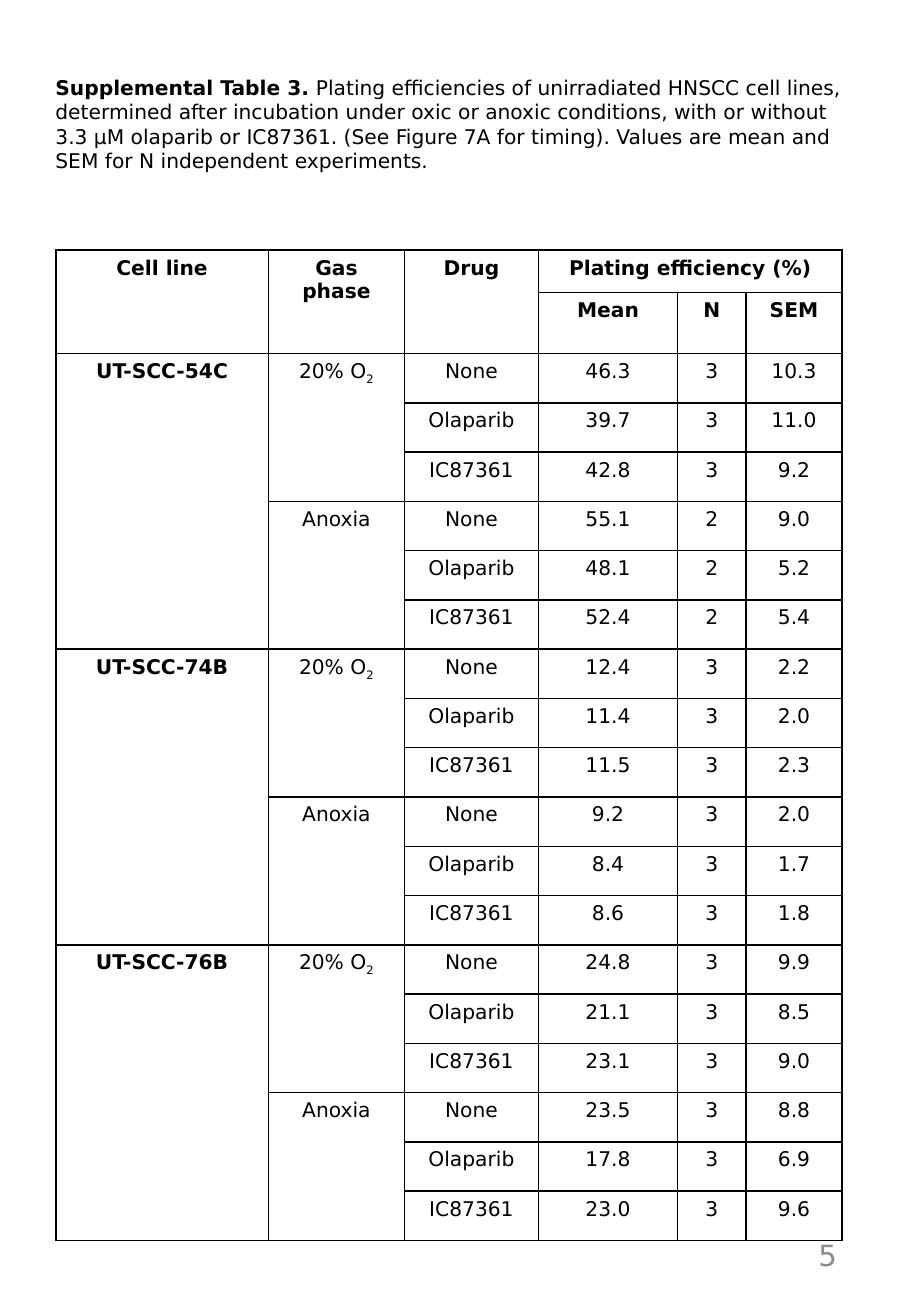
from lxml.etree import SubElement
from pptx import Presentation
from pptx.dml.color import RGBColor
from pptx.enum.text import MSO_ANCHOR, PP_ALIGN
from pptx.oxml.ns import qn
from pptx.util import Cm, Pt

FONT = "DejaVu Sans"
COLORS = {"ink": "000000", "paper": "FFFFFF", "gray": "8C8C8C"}


def style(run, size=12, color="ink", bold=False):
    run.font.name = FONT
    run.font.size = Pt(size)
    run.font.bold = bold
    run.font.color.rgb = RGBColor.from_string(COLORS[color])


def fill_cell(cell, text, bold=False):
    para = cell.text_frame.paragraphs[0]
    para.text = text
    para.alignment = PP_ALIGN.CENTER
    for run in para.runs:
        style(run, bold=bold)


deck = Presentation()
deck.slide_width, deck.slide_height = Cm(19.05), Cm(27.51)
slide = deck.slides.add_slide(deck.slide_layouts[6])

# Caption
box = slide.shapes.add_textbox(Cm(0.91), Cm(1.45), Cm(17.22), Cm(2.31))
box.text_frame.word_wrap = True
para = box.text_frame.paragraphs[0]
para.text = "Supplemental Table 3."
para.add_run().text = (
    " Plating efficiencies of unirradiated HNSCC cell lines, determined after "
    "incubation under oxic or anoxic conditions, with or without 3.3 μM olaparib "
    "or IC87361. (See Figure 7A for timing). Values are mean and SEM for N "
    "independent experiments."
)
for run, bold in zip(para.runs, (True, False)):
    style(run, bold=bold)

# Page number
box = slide.shapes.add_textbox(Cm(13.46), Cm(25.5), Cm(4.29), Cm(1.47))
box.text_frame.word_wrap = True
box.text_frame.vertical_anchor = MSO_ANCHOR.MIDDLE
para = box.text_frame.paragraphs[0]
para.text = "5"
para.alignment = PP_ALIGN.RIGHT
style(para.runs[0], 17.3, "gray")

# Values by cell line, then gas phase, then drug: mean, N, SEM
GASES = ["20% O", "Anoxia"]
DRUGS = ["None", "Olaparib", "IC87361"]
DATA = {
    "UT-SCC-54C": [
        ("46.3", "3", "10.3"), ("39.7", "3", "11.0"), ("42.8", "3", "9.2"),
        ("55.1", "2", "9.0"), ("48.1", "2", "5.2"), ("52.4", "2", "5.4"),
    ],
    "UT-SCC-74B": [
        ("12.4", "3", "2.2"), ("11.4", "3", "2.0"), ("11.5", "3", "2.3"),
        ("9.2", "3", "2.0"), ("8.4", "3", "1.7"), ("8.6", "3", "1.8"),
    ],
    "UT-SCC-76B": [
        ("24.8", "3", "9.9"), ("21.1", "3", "8.5"), ("23.1", "3", "9.0"),
        ("23.5", "3", "8.8"), ("17.8", "3", "6.9"), ("23.0", "3", "9.6"),
    ],
}

# Table grid
WIDTHS = [4.44, 2.85, 2.8, 2.91, 1.43, 2.01]
HEIGHTS = [0.89, 1.27] + [1.03] * 18
frame = slide.shapes.add_table(len(HEIGHTS), len(WIDTHS), Cm(1.17), Cm(5.23),
                               Cm(sum(WIDTHS)), Cm(sum(HEIGHTS)))
table = frame.table
table.first_row = table.horz_banding = False
for col, width in zip(table.columns, WIDTHS):
    col.width = Cm(width)
for row, height in zip(table.rows, HEIGHTS):
    row.height = Cm(height)

# Cell borders and fill
for cell in table.iter_cells():
    props = cell._tc.get_or_add_tcPr()
    for side in ("a:lnL", "a:lnR", "a:lnT", "a:lnB"):
        line = SubElement(props, qn(side), w=str(Pt(1)))
        solid = SubElement(line, qn("a:solidFill"))
        SubElement(solid, qn("a:srgbClr"), val=COLORS["ink"])
    cell.fill.solid()
    cell.fill.fore_color.rgb = RGBColor.from_string(COLORS["paper"])

# Header
for c, text in enumerate(["Cell line", "Gas phase", "Drug"]):
    table.cell(0, c).merge(table.cell(1, c))
    fill_cell(table.cell(0, c), text, True)
table.cell(0, 3).merge(table.cell(0, 5))
fill_cell(table.cell(0, 3), "Plating efficiency (%)", True)
for c, text in enumerate(["Mean", "N", "SEM"], 3):
    fill_cell(table.cell(1, c), text, True)

# Body
for group, (name, rows) in enumerate(DATA.items()):
    top = 2 + 6 * group
    table.cell(top, 0).merge(table.cell(top + 5, 0))
    fill_cell(table.cell(top, 0), name, True)
    for g, gas in enumerate(GASES):
        r = top + 3 * g
        table.cell(r, 1).merge(table.cell(r + 2, 1))
        fill_cell(table.cell(r, 1), gas)
    # Subscript of the oxygen label
    sub = table.cell(top, 1).text_frame.paragraphs[0].add_run()
    sub.text = "2"
    style(sub)
    sub._r.get_or_add_rPr().set("baseline", "-25000")
    for i, values in enumerate(rows):
        for c, text in enumerate((DRUGS[i % 3], *values), 2):
            fill_cell(table.cell(top + i, c), text)

deck.save("out.pptx")
